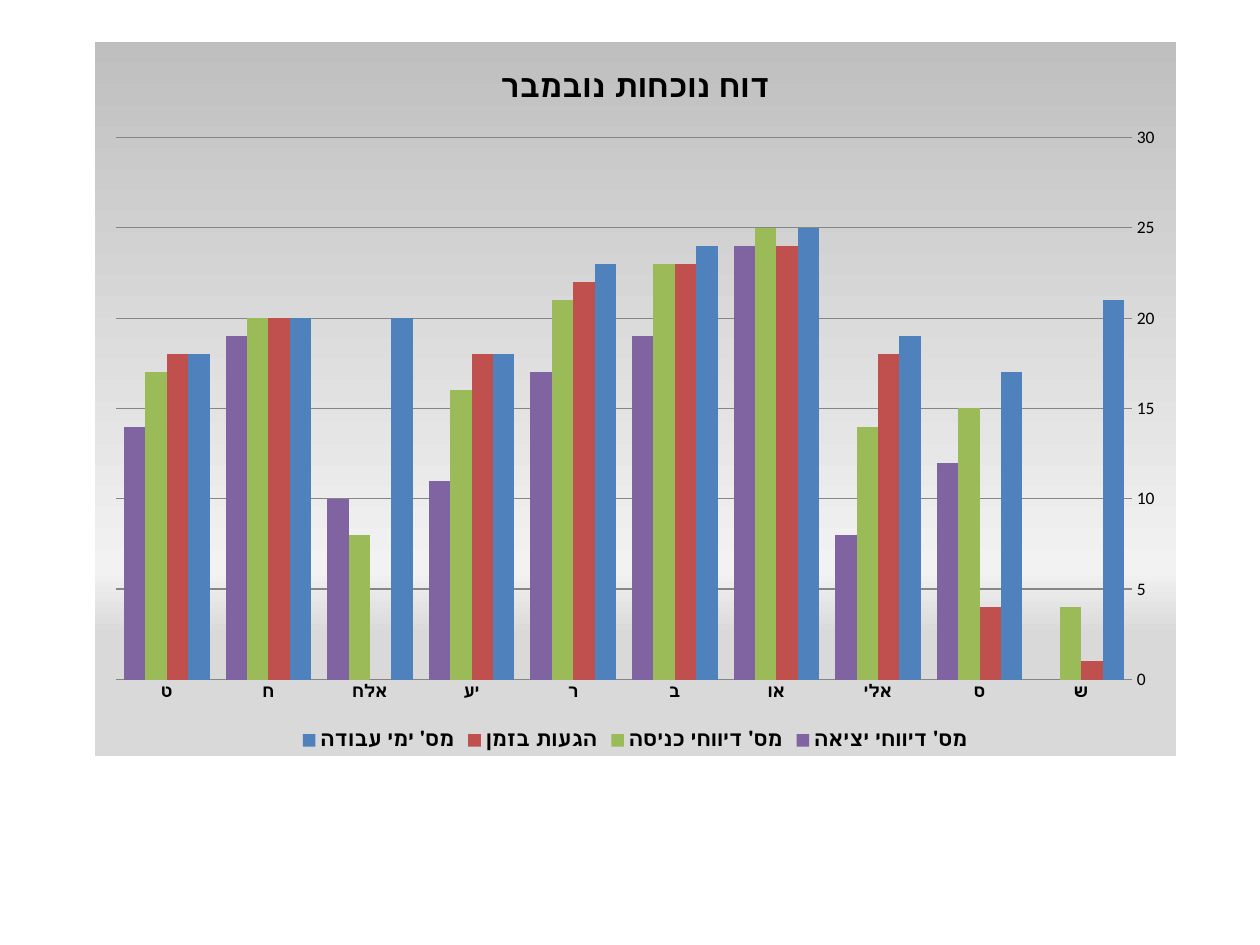
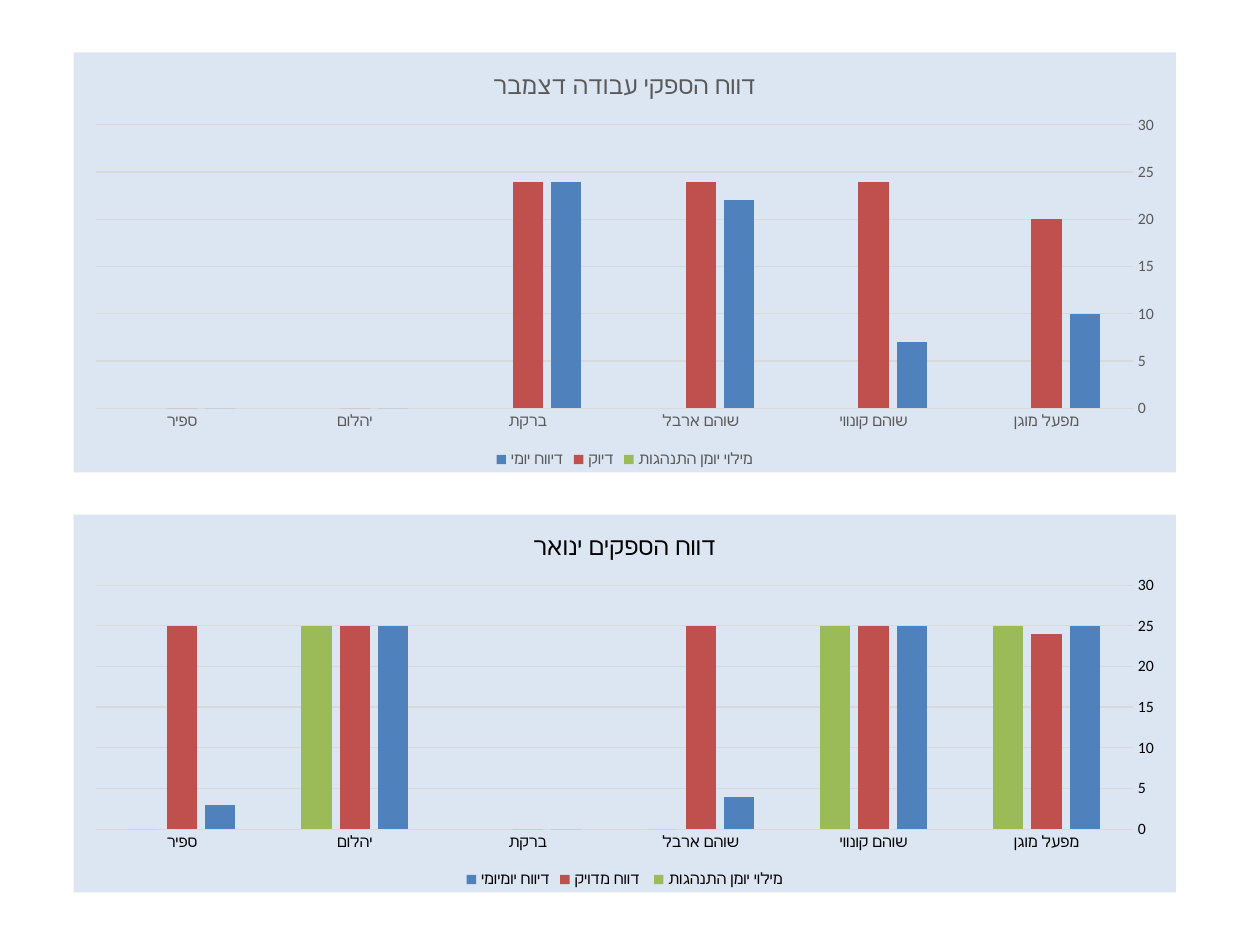
import dataclasses

import pptx
import pptx.chart.data
import pptx.dml.color
import pptx.enum.chart
import pptx.oxml
import pptx.oxml.ns
import pptx.util

RGBColor = pptx.dml.color.RGBColor
BLACK = RGBColor(0x00, 0x00, 0x00)
SLATE = RGBColor(0x59, 0x59, 0x59)
AXIS_GREY = RGBColor(0x86, 0x86, 0x86)
PALE_GREY = RGBColor(0xD9, 0xD9, 0xD9)
MID_GREY = RGBColor(0xBF, 0xBF, 0xBF)
LIGHT_GREY = RGBColor(0xF2, 0xF2, 0xF2)
PALE_BLUE = RGBColor(0xDC, 0xE6, 0xF2)
SERIES_COLORS = (
    RGBColor(0x4F, 0x81, 0xBD),
    RGBColor(0xC0, 0x50, 0x4D),
    RGBColor(0x9B, 0xBB, 0x59),
    RGBColor(0x80, 0x64, 0xA2),
)
FONT = "Calibri"

# The slide is a grid of 120 columns by 90 rows
SLIDE_WIDTH = pptx.util.Inches(10)
SLIDE_HEIGHT = pptx.util.Inches(7.5)
COLUMN = SLIDE_WIDTH // 120
ROW = SLIDE_HEIGHT // 90


@dataclasses.dataclass
class ChartStyle:
    background: tuple  # (position in percent, colour) stops
    text_color: RGBColor
    line_color: RGBColor
    title_size: int
    axis_size: int
    legend_size: int
    gap: int
    overlap: int = 0
    bold: bool = False


NOVEMBER_STYLE = ChartStyle(
    ((0, MID_GREY), (74, LIGHT_GREY), (83, PALE_GREY), (100, PALE_GREY)),
    BLACK, AXIS_GREY, title_size=18, axis_size=10, legend_size=12, gap=75, bold=True)
JANUARY_STYLE = ChartStyle(
    ((0, PALE_BLUE),), BLACK, PALE_GREY,
    title_size=14, axis_size=9, legend_size=9, gap=219, overlap=-27)
DECEMBER_STYLE = dataclasses.replace(JANUARY_STYLE, text_color=SLATE)

WORKERS = ("ש", "ס", "אלי", "או", "ב", "ר", "יע", "אלח", "ח", "ט")
NOVEMBER = {
    "מס' ימי עבודה": (21, 17, 19, 25, 24, 23, 18, 20, 20, 18),
    "הגעות בזמן": (1, 4, 18, 24, 23, 22, 18, 0, 20, 18),
    "מס' דיווחי כניסה": (4, 15, 14, 25, 23, 21, 16, 8, 20, 17),
    "מס' דיווחי יציאה": (0, 12, 8, 24, 19, 17, 11, 10, 19, 14),
}
SITES = ("מפעל מוגן", "שוהם קונווי", "שוהם ארבל", "ברקת", "יהלום", "ספיר")
DECEMBER = {
    "דיווח יומי": (10, 7, 22, 24, 0, 0),
    "דיוק": (20, 24, 24, 24, 0, 0),
    "מילוי יומן התנהגות": (None,) * len(SITES),
}
JANUARY = {
    "דיווח יומיומי": (25, 25, 4, 0, 25, 3),
    "דווח מדויק ": (24, 25, 25, 0, 25, 25),
    "מילוי יומן התנהגות": (25, 25, 0, None, 25, 0),
}


def set_font(font, size, color, bold=False):
    font.name = FONT
    font.size = pptx.util.Pt(size)
    font.bold = bold
    font.color.rgb = color


def set_line(line, color):
    line.color.rgb = color
    line.width = pptx.util.Pt(0.75)


def fill_background(chart, stops):
    """Fill the chart area: one stop is a solid colour, more a downward gradient."""
    colors = [f'<a:srgbClr val="{color}"/>' for _, color in stops]
    if len(stops) == 1:
        fill = f"<a:solidFill>{colors[0]}</a:solidFill>"
    else:
        marks = "".join(f'<a:gs pos="{position * 1000}">{color}</a:gs>'
                        for (position, _), color in zip(stops, colors))
        fill = f'<a:gradFill><a:gsLst>{marks}</a:gsLst><a:lin ang="5400000" scaled="0"/></a:gradFill>'
    properties = pptx.oxml.parse_xml(
        f'<c:spPr {pptx.oxml.ns.nsdecls("c", "a")}>{fill}<a:ln><a:noFill/></a:ln></c:spPr>')
    chart.element.find(pptx.oxml.ns.qn("c:chart")).addnext(properties)


def style_axes(chart, style):
    for axis in (chart.category_axis, chart.value_axis):
        axis.major_tick_mark = axis.minor_tick_mark = pptx.enum.chart.XL_TICK_MARK.NONE
    names, values = chart.category_axis, chart.value_axis
    # Categories run right to left, which also puts the values on the right
    names.reverse_order = True
    names.has_major_gridlines = False
    set_line(names.format.line, style.line_color)
    set_font(names.tick_labels.font, style.axis_size, style.text_color, style.bold)
    values.minimum_scale, values.maximum_scale, values.major_unit = 0, 30, 5
    values.has_major_gridlines = True
    set_line(values.major_gridlines.format.line, style.line_color)
    values.format.line.fill.background()
    values.tick_labels.number_format = "0"
    values.tick_labels.number_format_is_linked = False
    set_font(values.tick_labels.font, style.axis_size, style.text_color)


def add_column_chart(page, box, title, categories, series, style):
    """Draw a column chart; box is left, top, width, height in grid units."""
    data = pptx.chart.data.CategoryChartData(number_format="0")
    data.categories = categories
    for name, values in series.items():
        data.add_series(name, values)
    left, top, width, height = box
    chart = page.shapes.add_chart(
        pptx.enum.chart.XL_CHART_TYPE.COLUMN_CLUSTERED,
        left * COLUMN, top * ROW, width * COLUMN, height * ROW, data).chart
    set_font(chart.font, 10, BLACK)
    fill_background(chart, style.background)

    # Title
    chart.has_title = True
    span = chart.chart_title.text_frame.paragraphs[0].add_run()
    span.text = title
    set_font(span.font, style.title_size, style.text_color, style.bold)
    chart.chart_title.include_in_layout = False

    # Columns
    plot = chart.plots[0]
    plot.gap_width, plot.overlap = style.gap, style.overlap
    plot.vary_by_categories = False
    for columns, color in zip(plot.series, SERIES_COLORS):
        columns.format.fill.solid()
        columns.format.fill.fore_color.rgb = color
        columns.invert_if_negative = False
    style_axes(chart, style)

    # Legend
    chart.has_legend = True
    chart.legend.position = pptx.enum.chart.XL_LEGEND_POSITION.BOTTOM
    chart.legend.include_in_layout = False
    set_font(chart.legend.font, style.legend_size, style.text_color, style.bold)


def add_page(deck):
    return deck.slides.add_slide(deck.slide_layouts.get_by_name("Blank"))


def build_attendance_page(deck):
    add_column_chart(add_page(deck), (9, 4, 103, 68), "דוח נוכחות נובמבר",
                     WORKERS, NOVEMBER, NOVEMBER_STYLE)


def build_output_page(deck):
    page = add_page(deck)
    add_column_chart(page, (7, 49, 105, 36), "דווח הספקים ינואר",
                     SITES, JANUARY, JANUARY_STYLE)
    add_column_chart(page, (7, 5, 105, 40), "דווח הספקי עבודה דצמבר",
                     SITES, DECEMBER, DECEMBER_STYLE)


def main():
    deck = pptx.Presentation()
    deck.slide_width, deck.slide_height = SLIDE_WIDTH, SLIDE_HEIGHT
    build_attendance_page(deck)
    build_output_page(deck)
    deck.save("out.pptx")


if __name__ == "__main__":
    main()
